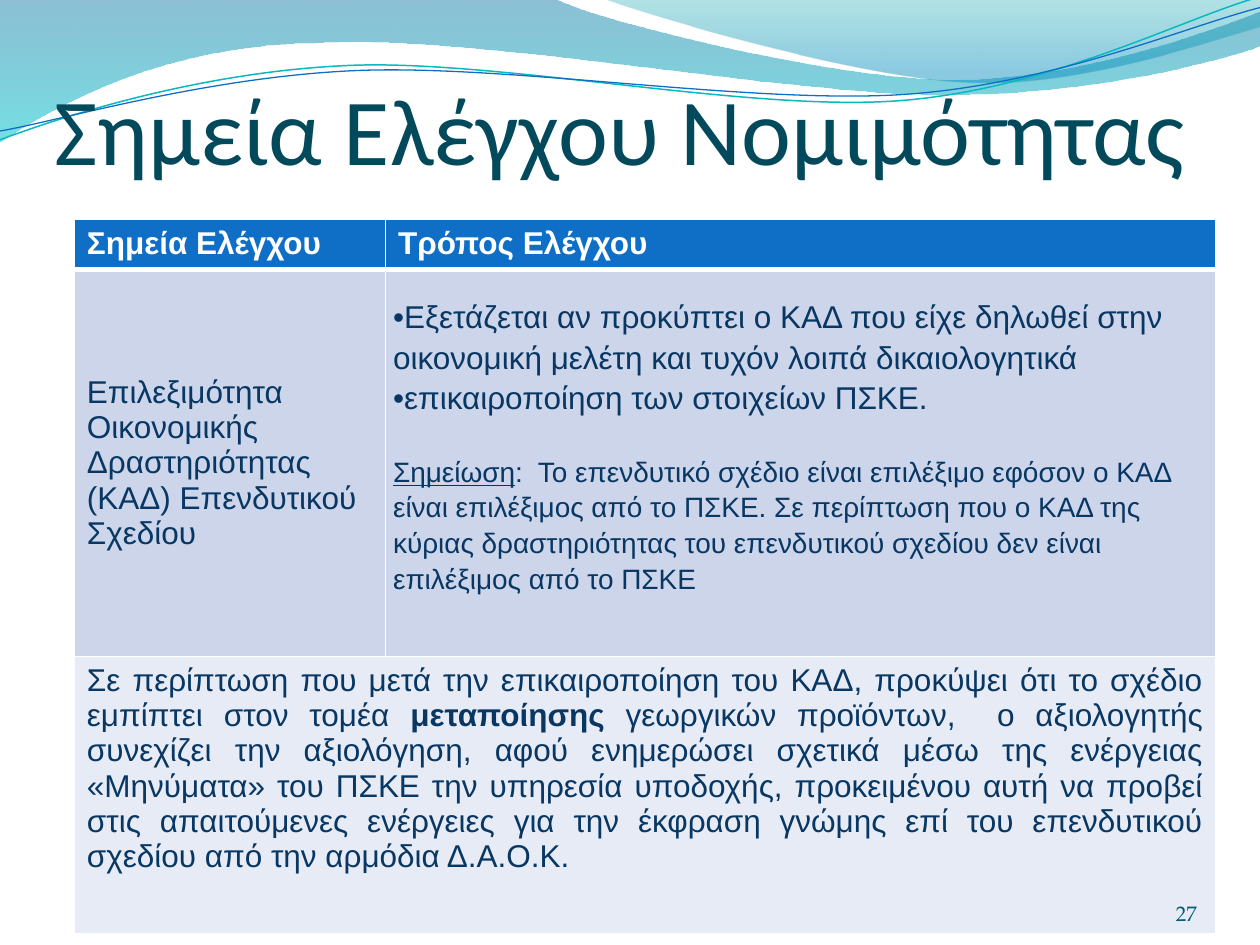
from dataclasses import dataclass
from math import cos, radians, sin

from lxml import etree
from pptx import Presentation
from pptx.dml.color import RGBColor
from pptx.enum.text import MSO_ANCHOR, MSO_AUTO_SIZE, PP_ALIGN
from pptx.oxml.ns import qn
from pptx.util import Inches, Pt

TOP, MIDDLE, BOTTOM = MSO_ANCHOR.TOP, MSO_ANCHOR.MIDDLE, MSO_ANCHOR.BOTTOM
LEFT, RIGHT, JUSTIFY = PP_ALIGN.LEFT, PP_ALIGN.RIGHT, PP_ALIGN.JUSTIFY
NO_AUTOFIT = MSO_AUTO_SIZE.NONE


@dataclass(frozen=True)
class Theme:
    title: str = "03495C"
    body: str = "083763"
    number: str = "045C75"
    white: str = "FFFFFF"
    header: str = "0F6FC6"
    band: str = "CCD5EA"
    light_band: str = "E7EBF5"
    teal_line: str = "0AB8BF"
    title_font: str = "Calibri"
    body_font: str = "Arial"
    number_font: str = "TeX Gyre Pagella"
    title_size: float = 54
    body_size: float = 18
    note_size: float = 16
    number_size: float = 12


THEME = Theme()
WAVE_ANGLE = -2.7
CELL_INSETS = (0.1, 0.05, 0.1, 0.05)
METHOD_INSETS = (0.06, 0.2, 0.06, 0.08)

LEFT_SWEEP_BOX = (-0.01, -0.01, 10.02, 1.14)
LEFT_SWEEP = [
    [(0, -0.01)],
    [(4.4, -0.01)],
    [(4.76, 0.17), (6.64, 0.63), (7.58, 0.63)],
    [(8.53, 0.63), (9.58, 0.26), (10, 0.09)],
    [(10.01, 0.36)],
    [(9.83, 0.44), (8.7, 0.76), (7.46, 0.75)],
    [(6.22, 0.75), (3.82, 0.28), (2.57, 0.34)],
    [(1.29, 0.35), (0.46, 0.83), (-0.01, 1.13)],
    [(0, -0.01)],
]
RIGHT_SWEEP_BOX = (4.79, -0.01, 5.21, 0.7)
RIGHT_SWEEP = [
    [(4.79, -0.01)],
    [(5.09, 0.11), (6.82, 0.62), (7.69, 0.65)],
    [(8.56, 0.69), (9.61, 0.32), (10, 0.21)],
    [(10, 0)],
    [(4.79, -0.01)],
]
TEAL_WAVE_BOX = (-0.02, 0.22, 10.02, 0.71)
TEAL_WAVE = [
    [(0, 1.11)],
    [(0.48, 0.93), (1.58, 0.57), (2.77, 0.52)],
    [(3.95, 0.47), (5.93, 0.89), (7.13, 0.8)],
    [(8.33, 0.71), (9.38, 0.15), (9.98, -0.02)],
]
BLUE_WAVE_BOX = (-0.02, 0.3, 10.03, 0.58)
BLUE_WAVE = [
    [(0, 1.04)],
    [(0.47, 0.96), (1.64, 0.61), (2.83, 0.56)],
    [(4.03, 0.51), (5.97, 0.83), (7.17, 0.75)],
    [(8.36, 0.67), (9.41, 0.21), (10, 0.06)],
]


def color(value):
    return RGBColor.from_string(value)


def turn(point, centre, degrees):
    angle = radians(degrees)
    dx, dy = point[0] - centre[0], point[1] - centre[1]
    return (centre[0] + dx * cos(angle) - dy * sin(angle),
            centre[1] + dx * sin(angle) + dy * cos(angle))


def add_outline(page, segments, box, close):
    ends = [(Inches(segment[-1][0]), Inches(segment[-1][1])) for segment in segments]
    builder = page.shapes.build_freeform(*ends[0])
    builder.add_line_segments(ends[1:], close=close)
    shape = builder.convert_to_shape()
    shape.left, shape.top, shape.width, shape.height = map(Inches, box)
    curve = shape._element.find(".//" + qn("a:path"))
    curve.set("w", str(shape.width))
    curve.set("h", str(shape.height))
    for step, segment in zip(list(curve), segments):
        if len(segment) == 3:
            step.tag = qn("a:cubicBezTo")
        for child in list(step):
            step.remove(child)
        for x, y in segment:
            etree.SubElement(step, qn("a:pt"), x=str(Inches(x - box[0])), y=str(Inches(y - box[1])))
    shape.shadow.inherit = False
    return shape


def add_sweep(page, segments, box, stops):
    shape = add_outline(page, segments, box, True)
    shape.line.fill.background()
    shape.fill.gradient()
    gradient = shape.fill._xPr.find(qn("a:gradFill"))
    for child in list(gradient):
        gradient.remove(child)
    stop_list = etree.SubElement(gradient, qn("a:gsLst"))
    for position, value, opacity in stops:
        stop = etree.SubElement(stop_list, qn("a:gs"), pos=str(position * 1000))
        shade = etree.SubElement(stop, qn("a:srgbClr"), val=value)
        etree.SubElement(shade, qn("a:alpha"), val=str(opacity * 1000))
    etree.SubElement(gradient, qn("a:lin"), ang="5400000", scaled="0")


def add_wave(page, segments, box, value, width):
    centre = (box[0] + box[2] / 2, box[1] + box[3] / 2)
    level = [[turn(point, centre, -WAVE_ANGLE) for point in segment] for segment in segments]
    shape = add_outline(page, level, box, False)
    shape.rotation = WAVE_ANGLE
    shape.fill.background()
    shape.line.color.rgb = color(value)
    shape.line.width = Pt(width)


def format_span(span, font, size, value, bold=False, underline=False):
    span.font.name = font
    span.font.size = Pt(size)
    span.font.color.rgb = color(value)
    span.font.bold = bold
    span.font.underline = underline


def write_body(para, text, size=THEME.body_size, value=THEME.body, **style):
    span = para.add_run()
    span.text = text
    format_span(span, THEME.body_font, size, value, **style)


def add_bullet(para):
    properties = para._p.get_or_add_pPr()
    properties.set("marL", "0")
    properties.set("indent", "0")
    etree.SubElement(properties, qn("a:buFont"), typeface=THEME.body_font)
    etree.SubElement(properties, qn("a:buChar"), char="•")


def set_line(box, text, font, size, value, align):
    frame = box.text_frame
    frame.text = text
    frame.word_wrap = True
    frame.auto_size = NO_AUTOFIT
    frame.vertical_anchor = BOTTOM
    frame.margin_left = frame.margin_right = frame.margin_top = frame.margin_bottom = 0
    para = frame.paragraphs[0]
    para.alignment = align
    format_span(para.runs[0], font, size, value)


def format_cell(cell, fill, top=1, bottom=1, insets=CELL_INSETS, anchor=TOP):
    cell.fill.solid()
    cell.fill.fore_color.rgb = color(fill)
    cell.vertical_anchor = anchor
    cell.margin_left, cell.margin_top, cell.margin_right, cell.margin_bottom = map(Inches, insets)
    properties = cell._tc.get_or_add_tcPr()
    widths = {"lnL": 1, "lnR": 1, "lnT": top, "lnB": bottom}
    for index, (side, width) in enumerate(widths.items()):
        border = etree.Element(qn(f"a:{side}"), w=str(Pt(width)))
        paint = etree.SubElement(border, qn("a:solidFill"))
        etree.SubElement(paint, qn("a:srgbClr"), val=THEME.white)
        properties.insert(index, border)


def write_method(cell):
    frame = cell.text_frame
    bullets = ["Εξετάζεται αν προκύπτει ο ΚΑΔ που είχε δηλωθεί στην οικονομική μελέτη "
               "και τυχόν λοιπά δικαιολογητικά", "επικαιροποίηση των στοιχείων ΠΣΚΕ."]
    for index, text in enumerate(bullets):
        para = frame.add_paragraph() if index else frame.paragraphs[0]
        add_bullet(para)
        write_body(para, text)
    note = frame.add_paragraph()
    note.space_before = Pt(20.5)
    write_body(note, "Σημείωση", THEME.note_size, underline=True)
    write_body(note, ":  Το επενδυτικό σχέδιο είναι επιλέξιμο εφόσον ο ΚΑΔ είναι επιλέξιμος "
               "από το ΠΣΚΕ. Σε περίπτωση που ο ΚΑΔ της κύριας δραστηριότητας του επενδυτικού "
               "σχεδίου δεν είναι επιλέξιμος από το ΠΣΚΕ", THEME.note_size)
    for para in frame.paragraphs:
        para.line_spacing = 1.15


def write_remark(cell):
    para = cell.text_frame.paragraphs[0]
    para.alignment = JUSTIFY
    write_body(para, "Σε περίπτωση που μετά την επικαιροποίηση του ΚΑΔ, προκύψει ότι το σχέδιο "
               "εμπίπτει στον τομέα ")
    write_body(para, "μεταποίησης", bold=True)
    write_body(para, " γεωργικών προϊόντων,  ο αξιολογητής συνεχίζει την αξιολόγηση, αφού "
               "ενημερώσει σχετικά μέσω της ενέργειας «Μηνύματα» του ΠΣΚΕ την υπηρεσία υποδοχής, "
               "προκειμένου αυτή να προβεί στις απαιτούμενες ενέργειες για την έκφραση γνώμης "
               "επί του επενδυτικού σχεδίου από την αρμόδια Δ.Α.Ο.Κ.")


def add_check_table(page):
    table = page.shapes.add_table(3, 2, Inches(0.59), Inches(1.74), Inches(9.06), Inches(5.67)).table
    for column, width in zip(table.columns, (2.47, 6.59)):
        column.width = Inches(width)
    for row, height in zip(table.rows, (0.4, 3.07, 2.2)):
        row.height = Inches(height)
    for index, heading in enumerate(("Σημεία Ελέγχου", "Τρόπος Ελέγχου")):
        cell = table.cell(0, index)
        format_cell(cell, THEME.header, bottom=3)
        write_body(cell.text_frame.paragraphs[0], heading, value=THEME.white, bold=True)
        format_cell(table.cell(2, index), THEME.light_band)
    topic, method, remark = table.cell(1, 0), table.cell(1, 1), table.cell(2, 0)
    format_cell(topic, THEME.band, top=3, anchor=MIDDLE)
    write_body(topic.text_frame.paragraphs[0],
               "Επιλεξιμότητα Οικονομικής Δραστηριότητας (ΚΑΔ) Επενδυτικού Σχεδίου")
    format_cell(method, THEME.band, top=3, insets=METHOD_INSETS)
    write_method(method)
    remark.merge(table.cell(2, 1))
    write_remark(remark)


def add_title(page):
    title = page.shapes.title
    title.left, title.top, title.width, title.height = map(Inches, (0.43, 0.84, 9, 0.62))
    set_line(title, "Σημεία Ελέγχου Νομιμότητας", THEME.title_font, THEME.title_size, THEME.title, LEFT)
    title.text_frame.margin_top = Inches(0.05)
    page.shapes._spTree.append(title._element)


def add_page_number(page):
    box = page.shapes.add_textbox(Inches(8.67), Inches(6.95), Inches(0.83), Inches(0.4))
    set_line(box, "27", THEME.number_font, THEME.number_size, THEME.number, RIGHT)


def main():
    deck = Presentation()
    deck.slide_width, deck.slide_height = Inches(10), Inches(7.5)
    page = deck.slides.add_slide(deck.slide_layouts[5])
    add_sweep(page, LEFT_SWEEP, LEFT_SWEEP_BOX, [(0, "0074A1", 45), (100, "00C6CF", 55)])
    add_sweep(page, RIGHT_SWEEP, RIGHT_SWEEP_BOX, [(0, "00A1A9", 30), (80, "008BBF", 45)])
    add_wave(page, TEAL_WAVE, TEAL_WAVE_BOX, THEME.teal_line, 0.85)
    add_wave(page, BLUE_WAVE, BLUE_WAVE_BOX, THEME.header, 0.75)
    add_title(page)
    add_check_table(page)
    add_page_number(page)
    deck.save("out.pptx")


if __name__ == "__main__":
    main()
